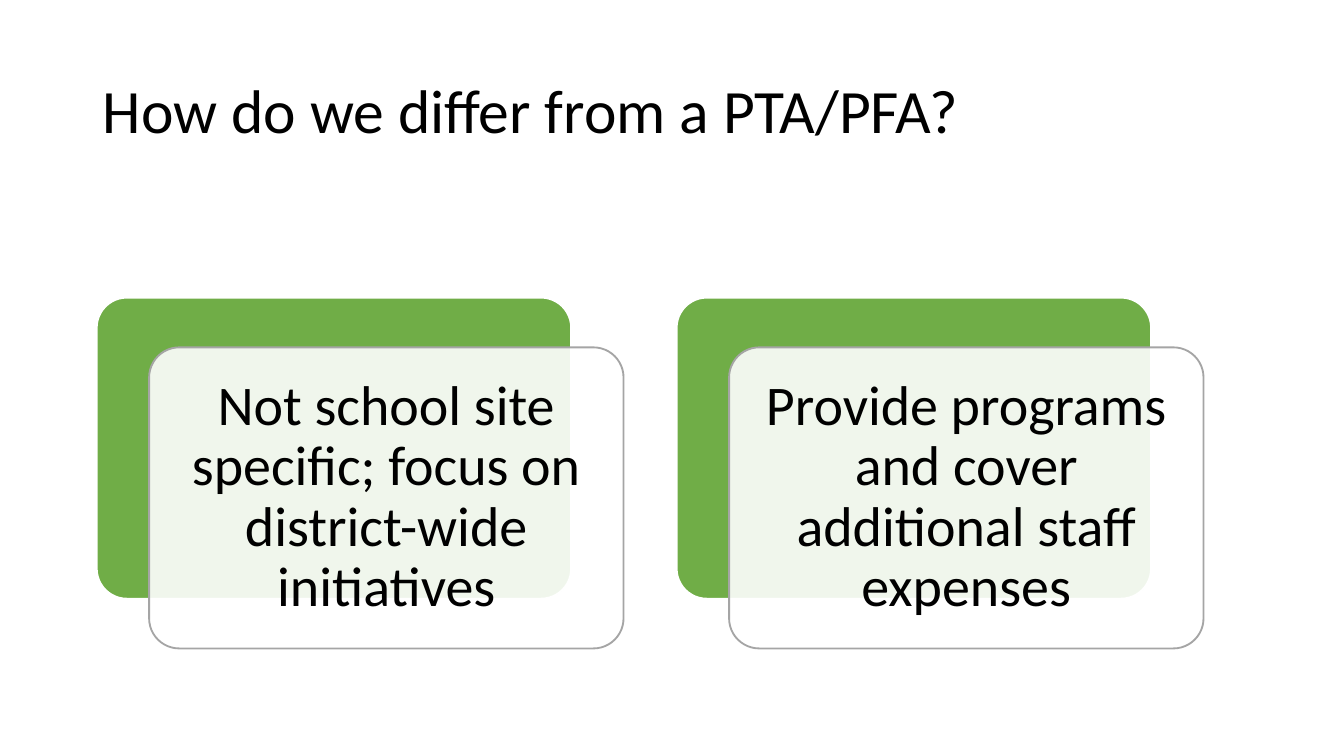
from lxml.etree import SubElement
from pptx import Presentation
from pptx.dml.color import RGBColor
from pptx.enum.shapes import MSO_SHAPE as Shape
from pptx.enum.text import MSO_ANCHOR as Anchor, PP_ALIGN as Align
from pptx.oxml.ns import qn
from pptx.util import Pt

PX = 4572  # EMU per px, 200 px to the inch
COLORS = {"green": "70AD47", "white": "FFFFFF", "gray": "A5A5A5", "black": "000000"}
CARD_WIDTH, CARD_HEIGHT = 706, 448
CARD_TEXTS = [
    "Not school site specific; focus on district-wide initiatives",
    "Provide programs and cover additional staff expenses",
]


def write(shape, text, size, align, inset_x, inset_y):
    frame = shape.text_frame
    frame.word_wrap = True
    frame.vertical_anchor = Anchor.MIDDLE
    frame.margin_left = frame.margin_right = inset_x * PX
    frame.margin_top = frame.margin_bottom = inset_y * PX
    para = frame.paragraphs[0]
    para.alignment = align
    para.line_spacing = 0.9
    span = para.add_run()
    span.text = text
    span.font.size = Pt(size)
    span.font.name = "Calibri"
    span.font.color.rgb = RGBColor.from_string(COLORS["black"])


def add_card(page, left, top, fill, line):
    card = page.shapes.add_shape(
        Shape.ROUNDED_RECTANGLE, left * PX, top * PX, CARD_WIDTH * PX, CARD_HEIGHT * PX)
    card.adjustments[0] = 0.1
    card.shadow.inherit = False
    card.fill.solid()
    card.fill.fore_color.rgb = RGBColor.from_string(COLORS[fill])
    card.line.color.rgb = RGBColor.from_string(COLORS[line])
    card.line.width = Pt(1)
    return card


deck = Presentation()
deck.slide_width, deck.slide_height = 2000 * PX, 1125 * PX
page = deck.slides.add_slide(deck.slide_layouts[5])

title = page.shapes.title
title.left, title.top, title.width, title.height = 138 * PX, 60 * PX, 1724 * PX, 218 * PX
write(title, "How do we differ from a PTA/PFA?", size=33, align=Align.LEFT, inset_x=15, inset_y=8)

for column, text in enumerate(CARD_TEXTS):
    left = 144 + column * 863
    add_card(page, left, 443, fill="green", line="white")
    front = add_card(page, left + 78, 517, fill="white", line="gray")
    color = front._element.spPr.find(qn("a:solidFill"))[0]
    SubElement(color, qn("a:alpha")).set("val", "90000")
    write(front, text, size=30, align=Align.CENTER, inset_x=24, inset_y=24)

deck.save("out.pptx")
